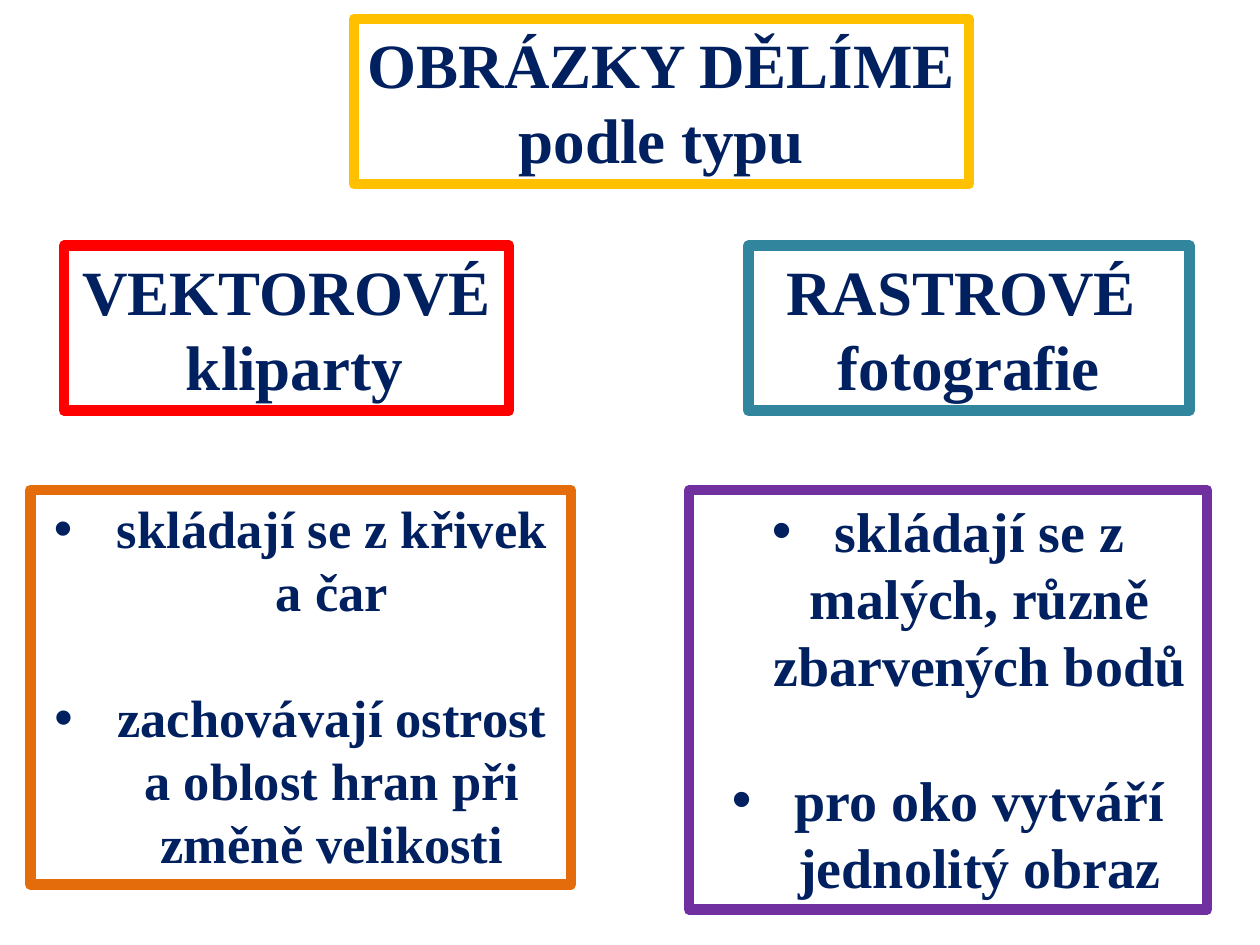
"""Build a slide that divides images by type into vector and raster."""
from lxml.etree import SubElement
from pptx import Presentation
from pptx.dml.color import RGBColor
from pptx.enum.text import MSO_ANCHOR, MSO_AUTO_SIZE, PP_ALIGN
from pptx.oxml.ns import qn
from pptx.util import Inches, Pt


def color(value):
    return RGBColor.from_string(value)


def set_bullet(para):
    properties = para._p.get_or_add_pPr()
    properties.set("marL", str(Inches(0.5)))
    properties.set("indent", str(Inches(-0.5)))
    SubElement(properties, qn("a:buFont")).set("typeface", "Arial")
    SubElement(properties, qn("a:buChar")).set("char", "•")


deck = Presentation()
deck.slide_width, deck.slide_height = Inches(10), Inches(7.5)
page = deck.slides.add_slide(deck.slide_layouts.get_by_name("Comparison"))

frame_format = {
    "word_wrap": True,
    "auto_size": MSO_AUTO_SIZE.NONE,
    "vertical_anchor": MSO_ANCHOR.TOP,
    "margin_left": Inches(0.1),
    "margin_right": Inches(0.1),
    "margin_top": Inches(0.05),
    "margin_bottom": Inches(0.05),
}
panels = [
    (0, (2.81, 0.15, 4.88, 1.31), "FFC000", 36, False,
     ["OBRÁZKY DĚLÍME podle typu"]),
    (1, (0.51, 1.95, 3.53, 1.31), "FF0000", 36, False,
     ["VEKTOROVÉ ", " kliparty"]),
    (3, (5.94, 1.95, 3.5, 1.31), "31859C", 36, False,
     ["RASTROVÉ ", "fotografie"]),
    (2, (0.24, 3.89, 4.29, 3.13), "E46C0A", 30, True,
     ["skládají se z křivek a čar",
      "zachovávají ostrost a oblost hran při změně velikosti"]),
    (4, (5.47, 3.89, 4.11, 3.33), "7030A0", 32, True,
     ["skládají se z malých, různě zbarvených bodů",
      "pro oko vytváří jednolitý obraz"]),
]
placeholders = {box.placeholder_format.idx: box for box in page.placeholders}

for index, place, outline, size, bulleted, texts in panels:
    box = placeholders[index]
    box.left, box.top, box.width, box.height = map(Inches, place)
    box.line.color.rgb = color(outline)
    box.line.width = Pt(6)
    frame = box.text_frame
    frame.text = "\n".join(texts)
    for name, value in frame_format.items():
        setattr(frame, name, value)
    for number, para in enumerate(frame.paragraphs):
        if bulleted:
            set_bullet(para)
        para.alignment = PP_ALIGN.CENTER
        para.line_spacing = 1.0
        para.space_before = Pt(size * 1.2 if bulleted and number else 0)
        font_format = {"name": "Times New Roman", "size": Pt(size), "bold": True}
        for span in para.runs:
            for name, value in font_format.items():
                setattr(span.font, name, value)
            span.font.color.rgb = color("002060")

deck.save("out.pptx")
